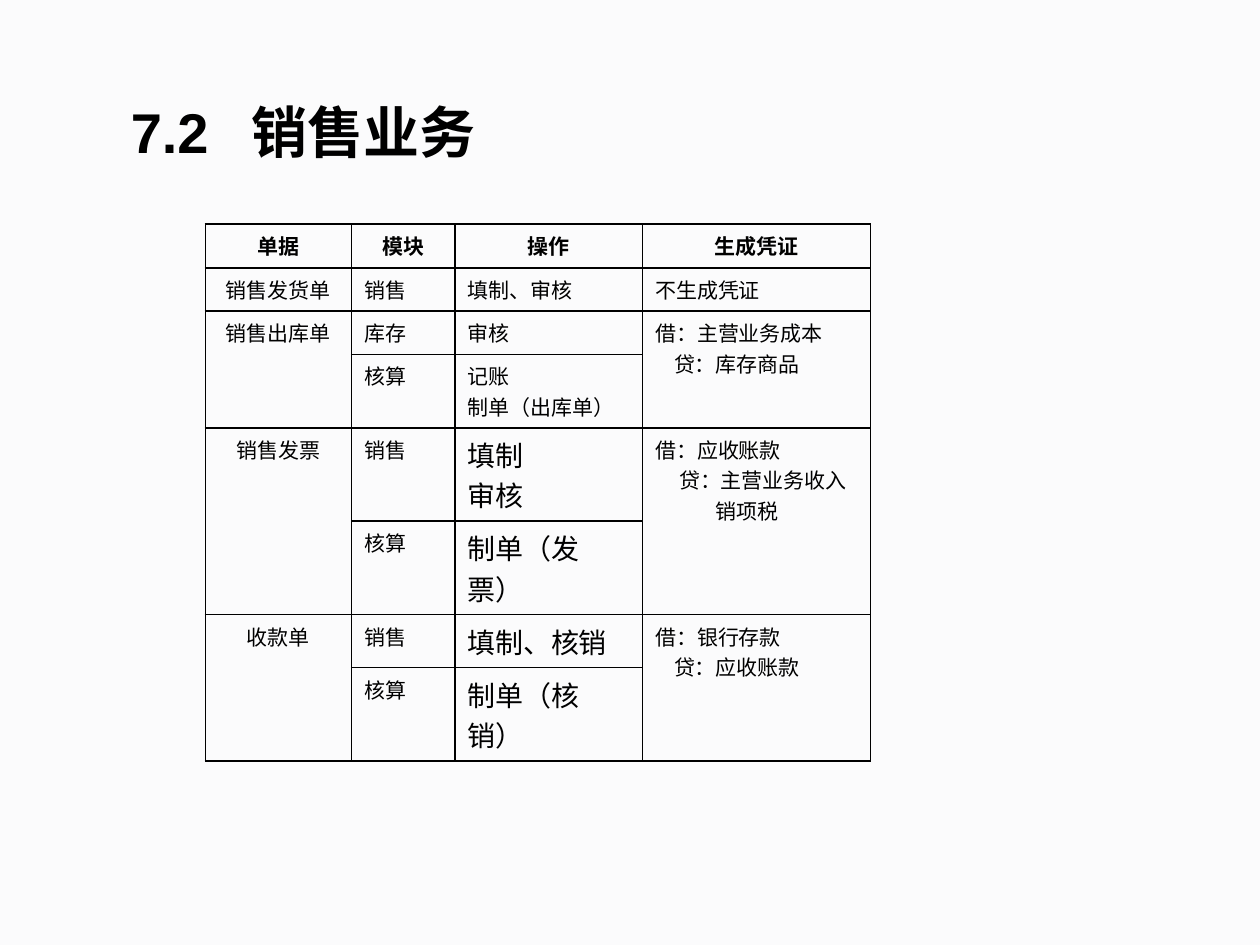
import pptx
import pptx.dml.color
import pptx.enum.text
import pptx.oxml
import pptx.oxml.ns
import pptx.util

INK = "000000"
PAPER = "FBFBFC"
WIDTH, HEIGHT = 10, 7.5
COLUMNS = [1.16, 0.82, 1.49, 1.81]
ROWS = [0.35, 0.34, 0.31, 0.53, 0.54, 0.33, 0.27, 0.29]
ALIGN = pptx.enum.text.PP_ALIGN
CELL_FONT = {"name": "Times New Roman", "size": pptx.util.Pt(12), "bold": False}
HEADER_FONT = {**CELL_FONT, "bold": True}
LARGE_FONT = {**CELL_FONT, "size": pptx.util.Pt(16)}
TITLE_FONT = {"name": "Arial", "size": pptx.util.Pt(32), "bold": True}

HEADERS = ["单据", "模块", "操作", "生成凭证"]
DOCUMENTS = [
    ("销售发货单", [("销售", ["填制、审核"])], [("不生成凭证", 0)], CELL_FONT),
    ("销售出库单", [("库存", ["审核"]), ("核算", ["记账", "制单（出库单）"])],
     [("借：主营业务成本", 0), ("贷：库存商品", 0.15)], CELL_FONT),
    ("销售发票", [("销售", ["填制", "审核"]), ("核算", ["制单（发票）"])],
     [("借：应收账款", 0), ("贷：主营业务收入", 0.19), ("销项税", 0.48)], LARGE_FONT),
    ("收款单", [("销售", ["填制、核销"]), ("核算", ["制单（核销）"])],
     [("借：银行存款", 0), ("贷：应收账款", 0.15)], LARGE_FONT),
]


def color(value):
    return pptx.dml.color.RGBColor.from_string(value)


def across(share):
    return pptx.util.Inches(WIDTH * share)


def down(share):
    return pptx.util.Inches(HEIGHT * share)


def write(frame, lines, formats, align=ALIGN.LEFT):
    for index, (text, indent) in enumerate(lines):
        para = frame.paragraphs[0] if index == 0 else frame.add_paragraph()
        para.alignment = align
        if indent:
            para._p.get_or_add_pPr().set("marL", str(pptx.util.Inches(indent)))
        span = para.add_run()
        span.text = text
        for name, value in formats.items():
            setattr(span.font, name, value)
        span.font.color.rgb = color(INK)


def add_title(page, number, text):
    box = page.shapes.add_textbox(across(0.094), down(0.096), across(0.577), down(0.085))
    frame = box.text_frame
    frame.word_wrap = True
    frame.vertical_anchor = pptx.enum.text.MSO_ANCHOR.MIDDLE
    write(frame, [(f"{number}\t{text}", 0)], TITLE_FONT)
    stop = pptx.util.Inches(0.96)
    tabs = pptx.oxml.parse_xml(
        f'<a:tabLst {pptx.oxml.ns.nsdecls("a")}><a:tab pos="{stop}" algn="l"/></a:tabLst>')
    frame.paragraphs[0]._p.get_or_add_pPr().append(tabs)


def style_cell(cell):
    for side in ("lnL", "lnR", "lnT", "lnB"):
        cell._tc.get_or_add_tcPr().append(pptx.oxml.parse_xml(
            f'<a:{side} {pptx.oxml.ns.nsdecls("a")} w="{pptx.util.Pt(1)}"><a:solidFill>'
            f'<a:srgbClr val="{INK}"/></a:solidFill></a:{side}>'))
    cell.fill.background()


def add_grid(page):
    holder = page.shapes.add_table(
        len(ROWS), len(COLUMNS), across(0.163), down(0.237),
        pptx.util.Inches(sum(COLUMNS)), pptx.util.Inches(sum(ROWS)))
    table = holder.table
    table.first_row = table.horz_banding = False
    for column, width in zip(table.columns, COLUMNS):
        column.width = pptx.util.Inches(width)
    for row, height in zip(table.rows, ROWS):
        row.height = pptx.util.Inches(height)
    for cell in table.iter_cells():
        style_cell(cell)
    return table


def fill_grid(table):
    for column, text in enumerate(HEADERS):
        write(table.cell(0, column).text_frame, [(text, 0)], HEADER_FONT, ALIGN.CENTER)
    top = 1
    for document, steps, entries, action_font in DOCUMENTS:
        bottom = top + len(steps) - 1
        if bottom > top:
            for column in (0, 3):
                table.cell(top, column).merge(table.cell(bottom, column))
        write(table.cell(top, 0).text_frame, [(document, 0)], CELL_FONT, ALIGN.CENTER)
        write(table.cell(top, 3).text_frame, entries, CELL_FONT)
        for row, (module, actions) in enumerate(steps, top):
            write(table.cell(row, 1).text_frame, [(module, 0)], CELL_FONT)
            write(table.cell(row, 2).text_frame, [(action, 0) for action in actions], action_font)
        top = bottom + 1


def main():
    deck = pptx.Presentation()
    deck.slide_width, deck.slide_height = across(1), down(1)
    page = deck.slides.add_slide(deck.slide_layouts[6])
    page.background.fill.solid()
    page.background.fill.fore_color.rgb = color(PAPER)
    fill_grid(add_grid(page))
    add_title(page, "7.2", "销售业务")
    deck.save("out.pptx")


if __name__ == "__main__":
    main()
